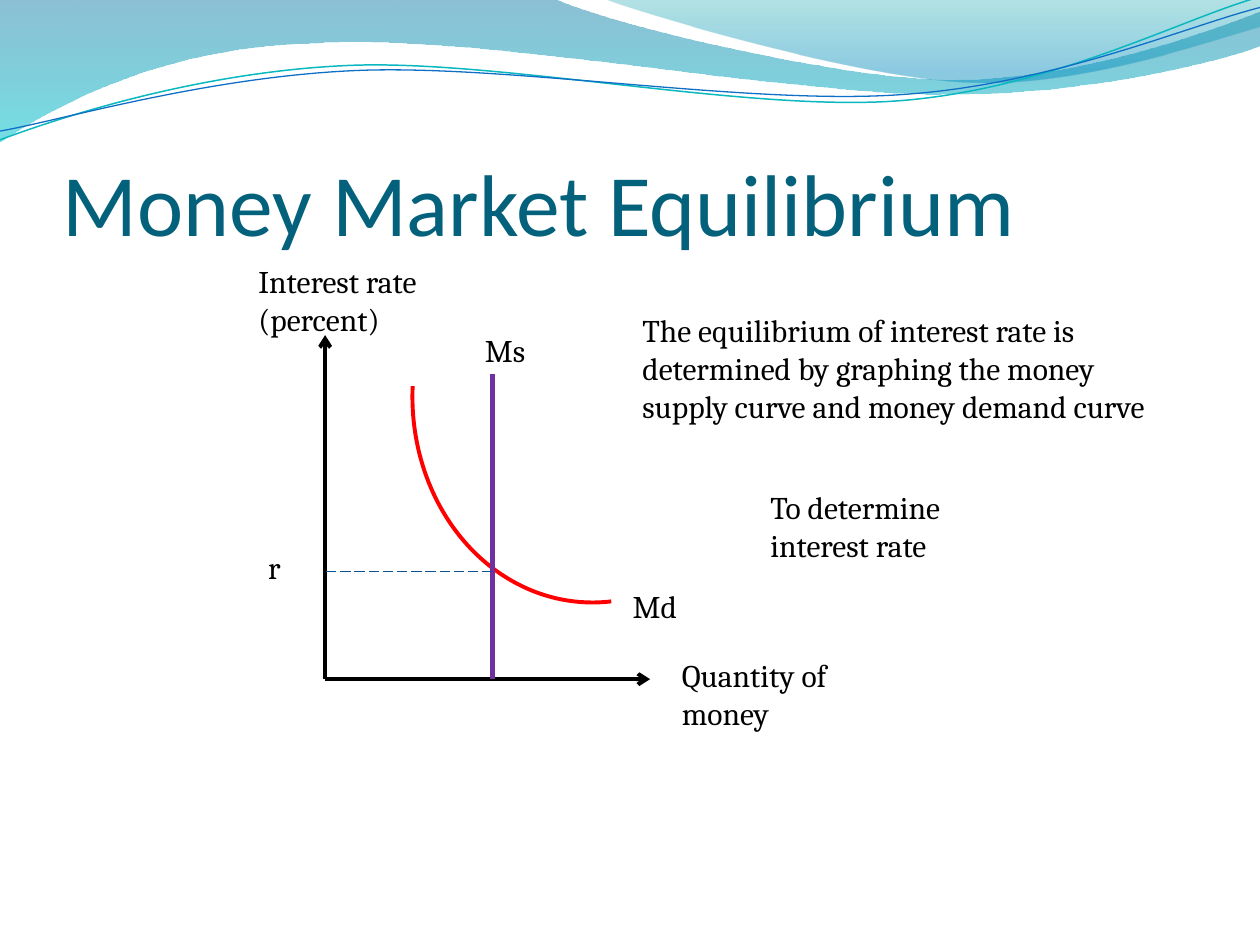
from math import cos, radians, sin

from lxml.etree import SubElement
from pptx import Presentation
from pptx.dml.color import RGBColor
from pptx.enum.dml import MSO_LINE
from pptx.enum.shapes import MSO_CONNECTOR, MSO_SHAPE
from pptx.enum.text import MSO_ANCHOR, MSO_AUTO_SIZE
from pptx.oxml.ns import qn
from pptx.util import Pt

BLACK = RGBColor(0x00, 0x00, 0x00)
RED = RGBColor(0xFF, 0x00, 0x00)
PURPLE = RGBColor(0x70, 0x30, 0xA0)
DASH_BLUE = RGBColor(0x09, 0x52, 0x95)
TITLE_TEAL = RGBColor(0x04, 0x61, 0x7B)
DEEP_BLUE = RGBColor(0x00, 0x74, 0xA1)
CYAN = RGBColor(0x00, 0xC6, 0xCF)
TEAL = RGBColor(0x00, 0xA1, 0xA9)
SKY_BLUE = RGBColor(0x00, 0x8B, 0xBF)
LINE_TEAL = RGBColor(0x0A, 0xB8, 0xBF)
LINE_BLUE = RGBColor(0x0F, 0x6F, 0xC6)

WAVE_TILT = 2.7

presentation = Presentation()
presentation.slide_width = Pt(720)
presentation.slide_height = Pt(540)
slide = presentation.slides.add_slide(presentation.slide_layouts[6])


def add_text(text, left, top, width, height, size=18, font="Cambria", color=BLACK,
             anchor=MSO_ANCHOR.TOP, side_inset=7.2, bottom_inset=3.6,
             auto_size=MSO_AUTO_SIZE.SHAPE_TO_FIT_TEXT):
    frame = slide.shapes.add_textbox(Pt(left), Pt(top), Pt(width), Pt(height)).text_frame
    frame.word_wrap = True
    frame.auto_size = auto_size
    frame.vertical_anchor = anchor
    frame.margin_left = frame.margin_right = Pt(side_inset)
    frame.margin_bottom = Pt(bottom_inset)
    run = frame.paragraphs[0].add_run()
    run.text = text
    run.font.size = Pt(size)
    run.font.name = font
    run.font.color.rgb = color


def add_wave(points, kinds, close):
    vertices = [(Pt(x), Pt(y)) for x, y in points]
    builder = slide.shapes.build_freeform(*vertices[0], scale=1.0)
    builder.add_line_segments(vertices[1:], close=close)
    shape = builder.convert_to_shape()
    shape.shadow.inherit = False
    straight = iter(list(shape._element.spPr.iter(qn("a:lnTo"))))
    for kind in kinds:
        segment = next(straight)
        if kind == "C":
            segment.tag = qn("a:cubicBezTo")
            for _ in range(2):
                control = next(straight)
                segment.append(control[0])
                control.getparent().remove(control)
    return shape


filled_waves = [
    ([(0, 0), (316.8, -0.7), (342.7, 12.2), (478.1, 45.4), (545.8, 45.4),
      (614.2, 45.4), (689.8, 18.7), (720, 6.5), (720.7, 25.9),
      (707.8, 31.7), (626.4, 54.7), (537.1, 54), (447.8, 54), (275, 20.2), (185, 24.5),
      (92.9, 25.9), (33.1, 59.8), (-0.7, 81.4)], "LCCLCCC",
     [(0, DEEP_BLUE, 45), (1, CYAN, 55)]),
    ([(344.9, -0.7), (366.5, 7.9), (491, 44.6), (553.7, 46.8),
      (616.3, 49.7), (691.9, 23), (720, 15.1), (720, 0)], "CCL",
     [(0, TEAL, 30), (0.8, SKY_BLUE, 45)]),
]
for points, kinds, stops in filled_waves:
    wave = add_wave(points, kinds, close=True)
    wave.line.fill.background()
    wave.fill.gradient()
    wave.fill.gradient_angle = 270
    for stop, (position, color, _) in zip(wave.fill.gradient_stops, stops):
        stop.position = position
        stop.color.rgb = color
    for element, (_, _, opacity) in zip(wave._element.spPr.iter(qn("a:srgbClr")), stops):
        SubElement(element, qn("a:alpha"), val=str(opacity * 1000))

wave_lines = [
    ([(0, 79.9), (34.6, 67), (113.8, 41), (199.4, 37.4), (284.4, 33.8), (427, 64.1),
      (513.4, 57.6), (599.8, 51.1), (675.4, 10.8), (718.6, -1.4)],
     (359.3, 41.4), LINE_TEAL, 0.85),
    ([(0, 74.9), (33.8, 69.1), (118.1, 43.9), (203.8, 40.3), (290.2, 36.7), (429.8, 60.5),
      (516.2, 54), (601.9, 48.2), (677.5, 15.1), (720, 4.3)],
     (359.6, 42.5), LINE_BLUE, 0.75),
]
tilt_cos, tilt_sin = cos(radians(WAVE_TILT)), sin(radians(WAVE_TILT))
for points, (center_x, center_y), color, width in wave_lines:
    level_points = [
        (center_x + (x - center_x) * tilt_cos - (y - center_y) * tilt_sin,
         center_y + (x - center_x) * tilt_sin + (y - center_y) * tilt_cos)
        for x, y in points]
    wave = add_wave(level_points, "CCC", close=False)
    wave.rotation = -WAVE_TILT
    wave.fill.background()
    wave.line.color.rgb = color
    wave.line.width = Pt(width)

add_text("Money Market Equilibrium", 36, 55.4, 648, 90, size=50, font="Calibri",
         color=TITLE_TEAL, anchor=MSO_ANCHOR.BOTTOM, side_inset=0, bottom_inset=0,
         auto_size=MSO_AUTO_SIZE.NONE)

demand_curve = slide.shapes.add_shape(
    MSO_SHAPE.ARC, Pt(235.7), Pt(106), Pt(208.1), Pt(238.3))
demand_curve.adjustments[0] = 157.74
demand_curve.adjustments[1] = 0
demand_curve.rotation = 182.5
demand_curve.shadow.inherit = False
demand_curve.fill.background()
demand_curve.line.color.rgb = RED
demand_curve.line.width = Pt(2.25)

axis_x, axis_y = 185.8, 388.1
supply_x, rate_y = 281.4, 326.4
graph_lines = [
    (axis_x, axis_y, axis_x, 191.5, BLACK, 2.25, "arrow"),
    (axis_x, axis_y, 371.5, axis_y, BLACK, 2.25, "arrow"),
    (supply_x, 213.8, supply_x, axis_y, PURPLE, 3, "plain"),
    (supply_x, rate_y, axis_x, rate_y, DASH_BLUE, 0.75, "dash"),
]
for x1, y1, x2, y2, color, width, style in graph_lines:
    connector = slide.shapes.add_connector(
        MSO_CONNECTOR.STRAIGHT, Pt(x1), Pt(y1), Pt(x2), Pt(y2))
    connector.line.color.rgb = color
    connector.line.width = Pt(width)
    if style == "dash":
        connector.line.dash_style = MSO_LINE.LONG_DASH
    if style == "arrow":
        SubElement(connector.line._get_or_add_ln(), qn("a:tailEnd"), type="arrow")
    SubElement(connector._element.spPr, qn("a:effectLst"))

labels = [
    ("Interest rate (percent)", 140.6, 146.2, 118.1, 51),
    ("Quantity of money", 382.6, 371.5, 112.3, 51),
    ("Ms", 270, 185.8, 50.4, 29),
    ("Md", 354.5, 331.9, 50.4, 29),
    ("r", 146.2, 309.6, 45.4, 29),
    ("The equilibrium of interest rate is determined by graphing the money supply curve "
     "and money demand curve", 360, 174.2, 320.4, 94.3),
    ("To determine interest rate", 433.1, 275.5, 157.7, 51),
]
for label in labels:
    add_text(*label)

presentation.save("out.pptx")
